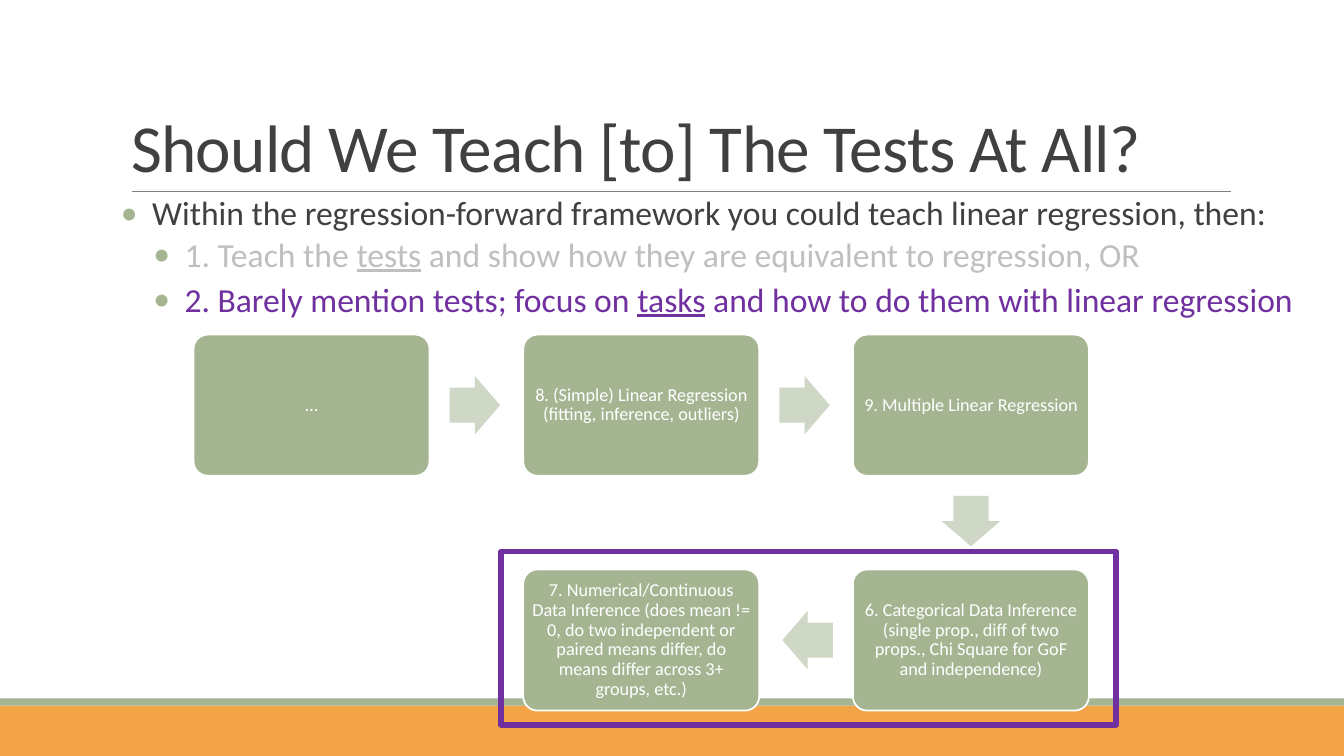
from dataclasses import dataclass

import pptx
import pptx.dml.color
import pptx.enum.shapes
import pptx.enum.text
import pptx.oxml
import pptx.oxml.ns
import pptx.util
from lxml import etree

PX = 9144  # EMU per px, 100 px to the inch
SHAPES = pptx.enum.shapes.MSO_SHAPE
ALIGN = pptx.enum.text.PP_ALIGN
ANCHOR = pptx.enum.text.MSO_ANCHOR


@dataclass(frozen=True)
class Theme:
    font: str = "Calibri"
    ink: str = "404040"
    faded: str = "BFBFBF"
    accent: str = "7030A0"
    green: str = "A5B592"
    pale_green: str = "CFD7C7"
    orange: str = "F3A447"
    rule: str = "808080"
    white: str = "FFFFFF"
    title_size: int = 48
    bullet_size: int = 24
    step_size: int = 13


@dataclass(frozen=True)
class Box:
    left: int
    top: int
    width: int
    height: int

    def emu(self) -> list[int]:
        return [n * PX for n in (self.left, self.top, self.width, self.height)]


@dataclass(frozen=True)
class Bullet:
    before: str
    color: str
    underlined: str = ""
    after: str = ""
    indent: int = 31
    space_before: int = 2
    space_after: int = 4


@dataclass(frozen=True)
class Step:
    column: int
    row: int
    text: str


@dataclass(frozen=True)
class Arrow:
    left: int
    top: int
    rotation: int = 0


THEME = Theme()
SLIDE = Box(0, 0, 1333, 750)
STEP_LEFT, STEP_TOP, STEP_WIDTH, STEP_HEIGHT = 192, 332, 234, 140
COLUMN_PITCH, ROW_PITCH = 327, 233

BULLETS = [
    Bullet("Within the regression-forward framework you could teach linear regression, then:",
           THEME.ink, space_before=12, space_after=2),
    Bullet("1. Teach the ", THEME.faded, "tests",
           " and show how they are equivalent to regression, OR", indent=63),
    Bullet("2. Barely mention tests; focus on ", THEME.accent, "tasks",
           " and how to do them with linear regression", indent=63),
]
STEPS = [
    Step(0, 0, "…"),
    Step(1, 0, "8. (Simple) Linear Regression (fitting, inference, outliers)"),
    Step(2, 0, "9. Multiple Linear Regression"),
    Step(2, 1, "6. Categorical Data Inference (single prop., diff of two props., "
               "Chi Square for GoF and independence)"),
    Step(1, 1, "7. Numerical/Continuous Data Inference (does mean != 0, do two independent "
               "or paired means differ, do means differ across 3+ groups, etc.)"),
]
ARROWS = [Arrow(446, 373), Arrow(773, 373), Arrow(938, 488, 90), Arrow(776, 606, 180)]


def rgb(color: str) -> pptx.dml.color.RGBColor:
    return pptx.dml.color.RGBColor.from_string(color)


def add_run(paragraph, text: str, size: int, color: str, underline: bool = False):
    run = paragraph.add_run()
    run.text = text
    run.font.name = THEME.font
    run.font.size = pptx.util.Pt(size)
    run.font.color.rgb = rgb(color)
    if underline:
        run.font.underline = True
    return run


def add_shape(slide, kind, box: Box, fill: str = "", line: str = "", line_width: float = 0):
    """Add a preset shape; an empty colour means no fill or no line."""
    shape = slide.shapes.add_shape(kind, *box.emu())
    shape.shadow.inherit = False
    if fill:
        shape.fill.solid()
        shape.fill.fore_color.rgb = rgb(fill)
    else:
        shape.fill.background()
    if line:
        shape.line.color.rgb = rgb(line)
        shape.line.width = pptx.util.Pt(line_width)
    else:
        shape.line.fill.background()
    return shape


def add_title_rule(slide) -> None:
    rule = slide.shapes.add_connector(
        pptx.enum.shapes.MSO_CONNECTOR.STRAIGHT, 131 * PX, 190 * PX, 1221 * PX, 190 * PX)
    rule.line.color.rgb = rgb(THEME.rule)
    rule.line.width = pptx.util.Pt(0.5)
    etree.SubElement(rule._element.spPr, pptx.oxml.ns.qn("a:effectLst"))


def fill_title(slide) -> None:
    title = slide.shapes.title
    title.left, title.top, title.width, title.height = Box(120, 31, 1100, 159).emu()
    frame = title.text_frame
    frame.auto_size = pptx.enum.text.MSO_AUTO_SIZE.NONE
    frame.vertical_anchor = ANCHOR.BOTTOM
    paragraph = frame.paragraphs[0]
    paragraph.alignment = ALIGN.LEFT
    paragraph.line_spacing = 0.85
    run = add_run(paragraph, "Should We Teach [to] The Tests At All?",
                  THEME.title_size, THEME.ink)
    run.font._element.set("spc", "-50")


def set_bullet(paragraph, indent: int) -> None:
    properties = paragraph._p.get_or_add_pPr()
    properties.set("marL", str(indent * PX))
    properties.set("indent", str(-31 * PX))
    color = etree.SubElement(properties, pptx.oxml.ns.qn("a:buClr"))
    etree.SubElement(color, pptx.oxml.ns.qn("a:srgbClr"), val=THEME.green)
    etree.SubElement(properties, pptx.oxml.ns.qn("a:buFont"), typeface=THEME.font)
    etree.SubElement(properties, pptx.oxml.ns.qn("a:buChar"), char="•")


def add_bullets(slide) -> None:
    frame = slide.shapes.add_textbox(*Box(120, 190, 1175, 500).emu()).text_frame
    frame.word_wrap = True
    frame.margin_left = frame.margin_right = 0
    for index, bullet in enumerate(BULLETS):
        paragraph = frame.add_paragraph() if index else frame.paragraphs[0]
        paragraph.line_spacing = 0.9
        paragraph.space_before = pptx.util.Pt(bullet.space_before)
        paragraph.space_after = pptx.util.Pt(bullet.space_after)
        set_bullet(paragraph, bullet.indent)
        for text in filter(None, (bullet.before, bullet.underlined, bullet.after)):
            add_run(paragraph, text, THEME.bullet_size, bullet.color,
                    underline=text == bullet.underlined)


def add_step(slide, step: Step) -> None:
    box = Box(STEP_LEFT + step.column * COLUMN_PITCH, STEP_TOP + step.row * ROW_PITCH,
              STEP_WIDTH, STEP_HEIGHT)
    card = add_shape(slide, SHAPES.ROUNDED_RECTANGLE, box, THEME.green, THEME.white, 1.25)
    card.adjustments[0] = 0.1
    frame = card.text_frame
    frame.word_wrap = True
    frame.vertical_anchor = ANCHOR.MIDDLE
    frame.margin_left = frame.margin_right = frame.margin_top = frame.margin_bottom = 5 * PX
    paragraph = frame.paragraphs[0]
    paragraph.alignment = ALIGN.CENTER
    paragraph.line_spacing = 0.9
    add_run(paragraph, step.text, THEME.step_size, THEME.white)


def add_arrow(slide, arrow: Arrow) -> None:
    shape = add_shape(slide, SHAPES.RIGHT_ARROW, Box(arrow.left, arrow.top, 50, 58),
                      THEME.pale_green)
    shape.adjustments[0] = 0.6
    shape.adjustments[1] = 0.5
    shape.rotation = arrow.rotation


def main() -> None:
    deck = pptx.Presentation()
    deck.slide_width, deck.slide_height = SLIDE.width * PX, SLIDE.height * PX
    slide = deck.slides.add_slide(deck.slide_layouts.get_by_name("Title Only"))
    add_shape(slide, SHAPES.RECTANGLE, Box(0, 700, SLIDE.width, 50), THEME.orange)
    add_shape(slide, SHAPES.RECTANGLE, Box(0, 693, SLIDE.width, 7), THEME.green)
    add_title_rule(slide)
    fill_title(slide)
    add_bullets(slide)
    for step in STEPS:
        add_step(slide, step)
    for arrow in ARROWS:
        add_arrow(slide, arrow)
    add_shape(slide, SHAPES.RECTANGLE, Box(497, 547, 610, 172), line=THEME.accent, line_width=4)
    deck.save("out.pptx")


if __name__ == "__main__":
    main()
